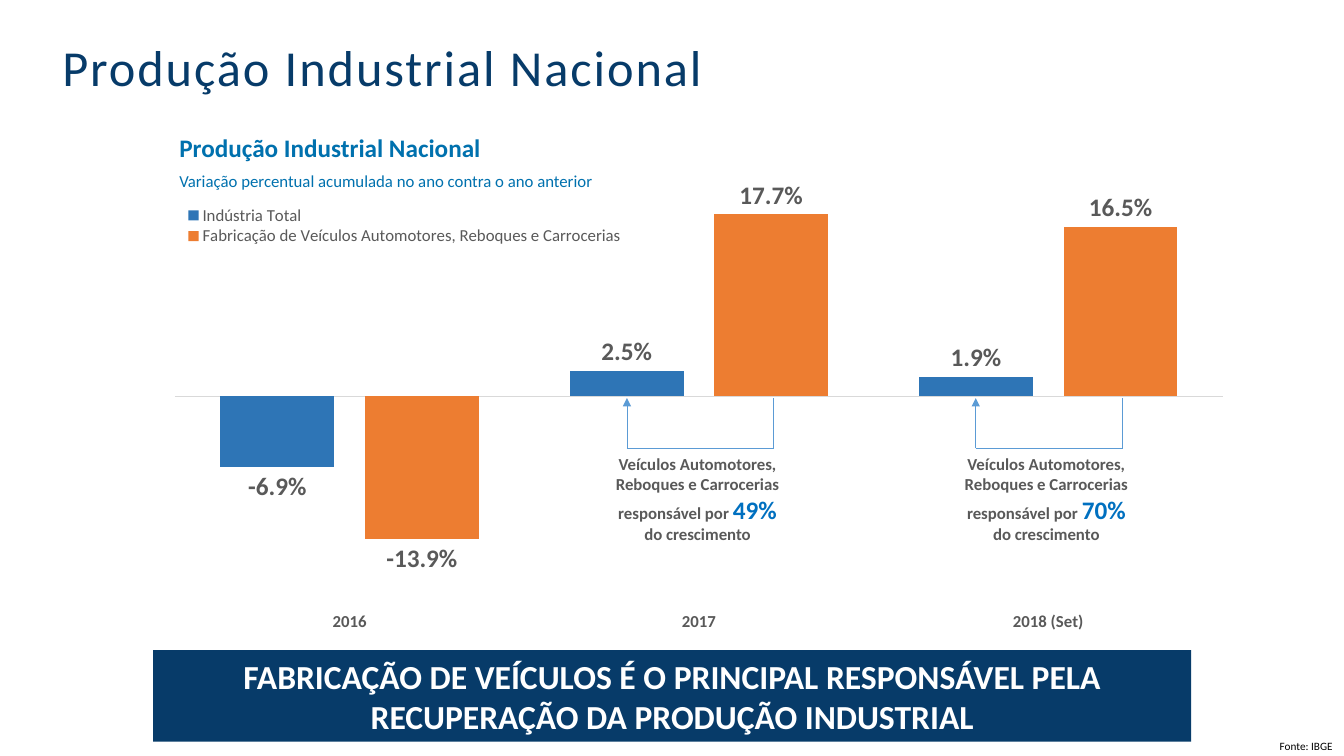
from lxml import etree
from pptx import Presentation
from pptx.chart.data import CategoryChartData
from pptx.dml.color import RGBColor
from pptx.enum.chart import (XL_CHART_TYPE, XL_LABEL_POSITION, XL_LEGEND_POSITION,
                             XL_TICK_LABEL_POSITION, XL_TICK_MARK)
from pptx.enum.shapes import MSO_CONNECTOR, MSO_SHAPE
from pptx.enum.text import MSO_ANCHOR, MSO_AUTO_SIZE, PP_ALIGN
from pptx.oxml.ns import qn
from pptx.util import Cm, Pt

COLUMN = XL_CHART_TYPE.COLUMN_CLUSTERED
OUTSIDE = XL_LABEL_POSITION.OUTSIDE_END
RIGHT = XL_LEGEND_POSITION.RIGHT
LOW = XL_TICK_LABEL_POSITION.LOW
NO_TICK = XL_TICK_MARK.NONE
STRAIGHT = MSO_CONNECTOR.STRAIGHT
RECT = MSO_SHAPE.RECTANGLE
MIDDLE = MSO_ANCHOR.MIDDLE
FIXED = MSO_AUTO_SIZE.NONE
LEFT, CENTER = PP_ALIGN.LEFT, PP_ALIGN.CENTER

FONT = "Calibri"
NAVY, BLUE, ACCENT = "073B69", "0071AE", "0070C0"
GRAY, PALE, ARROW = "595959", "D9D9D9", "5B9BD5"
WHITE, BLACK = "FFFFFF", "000000"

YEARS = ["2016", "2017", "2018 (Set)"]
SERIES = [
    ("Indústria Total", [-0.069, 0.025, 0.019], "2E75B6"),
    ("Fabricação de Veículos Automotores, Reboques e Carrocerias",
     [-0.139, 0.177, 0.165], "ED7D31"),
]
SHARES = ["49%", "70%"]


def put(obj, **vals):
    for name, val in vals.items():
        setattr(obj, name, val)


def rgb(code):
    return RGBColor.from_string(code)


def style(font, size, color, bold=False):
    put(font, name=FONT, size=Pt(size), bold=bold)
    font.color.rgb = rgb(color)


def fill(par, runs, **form):
    """Write (text, size, colour, bold) runs into a paragraph."""
    put(par, **form)
    for text, *look in runs:
        run = par.add_run()
        run.text = text
        style(run.font, *look)


def inset(frame, gap):
    for side in ("left", "top", "right", "bottom"):
        setattr(frame, f"margin_{side}", Cm(gap))


def add_text(slide, box, pars, gap=0.13, wrap=True, **form):
    frame = slide.shapes.add_textbox(*map(Cm, box)).text_frame
    frame.word_wrap = wrap
    inset(frame, gap)
    for i, runs in enumerate(pars):
        par = frame.add_paragraph() if i else frame.paragraphs[0]
        fill(par, runs, **form)


def add_line(slide, *ends, arrow=False):
    line = slide.shapes.add_connector(STRAIGHT, *map(Cm, ends))
    line.line.color.rgb = rgb(ARROW)
    line.line.width = Pt(0.5)
    if arrow:
        etree.SubElement(line.line._get_or_add_ln(), qn("a:tailEnd"), type="triangle")
    etree.SubElement(line._element.spPr, qn("a:effectLst"))


def add_title(slide):
    title = slide.shapes.title
    put(title, left=Cm(1.57), top=Cm(1.02), width=Cm(30.73), height=Cm(1.4))
    frame = title.text_frame
    put(frame, auto_size=FIXED, vertical_anchor=MIDDLE, word_wrap=True)
    inset(frame, 0)
    par = frame.paragraphs[0]
    fill(par, [("Produção Industrial Nacional", 36, NAVY)],
         alignment=LEFT, line_spacing=Pt(40))
    par.runs[0].font._element.set("spc", "140")


def lay(parent, index, inner=False, **sizes):
    """Place a chart part by fractions of the chart area."""
    for old in parent.findall(qn("c:layout")):
        parent.remove(old)
    layout = etree.Element(qn("c:layout"))
    manual = etree.SubElement(layout, qn("c:manualLayout"))
    if inner:
        etree.SubElement(manual, qn("c:layoutTarget"), val="inner")
    for name in ("xMode", "yMode"):
        etree.SubElement(manual, qn(f"c:{name}"), val="edge")
    for name, val in sizes.items():
        etree.SubElement(manual, qn(f"c:{name}"), val=str(val))
    parent.insert(index, layout)


def add_chart(slide):
    data = CategoryChartData(number_format="0.0%")
    data.categories = YEARS
    for name, vals, _ in SERIES:
        data.add_series(name, vals)
    box = map(Cm, (4.14, 4.45, 26.95, 11.79))
    chart = slide.shapes.add_chart(COLUMN, *box, data).chart
    put(chart, has_title=False, has_legend=True)
    style(chart.font, 10, BLACK)

    put(chart.legend, position=RIGHT, include_in_layout=False)
    style(chart.legend.font, 12, GRAY)
    lay(chart.legend._element, 1, x=0.01, y=0.06, w=0.43, h=0.09)
    area = chart._chartSpace.chart.plotArea
    lay(area, 0, inner=True, x=0.01, y=0.03, w=0.98, h=0.88)

    put(chart.value_axis, minimum_scale=-0.2, maximum_scale=0.2,
        has_major_gridlines=False, visible=False)
    axis = chart.category_axis
    put(axis, tick_label_position=LOW, major_tick_mark=NO_TICK,
        minor_tick_mark=NO_TICK)
    style(axis.tick_labels.font, 12, GRAY, True)
    axis.format.line.color.rgb = rgb(PALE)
    axis.format.line.width = Pt(0.75)

    plot = chart.plots[0]
    put(plot, gap_width=80, overlap=-27, vary_by_categories=False)
    for bars, (_, _, color) in zip(plot.series, SERIES):
        bars.invert_if_negative = False
        bars.format.fill.solid()
        bars.format.fill.fore_color.rgb = rgb(color)
        put(bars.data_labels, show_value=True, position=OUTSIDE,
            number_format="0.0%", number_format_is_linked=False)
        style(bars.data_labels.font, 18, GRAY, True)


def add_note(slide, left, share):
    """Bracket from the vehicle bar to the total bar, with its text."""
    right, top, low = left + 3.7, 10.03, 11.3
    add_line(slide, left, low, left, top, arrow=True)
    add_line(slide, right, top, right, low)
    add_line(slide, left, low, right, low)
    runs = [("Veículos Automotores, Reboques e Carrocerias responsável por ",
             12, GRAY, True),
            (share, 18, ACCENT, True),
            (" do crescimento", 12, GRAY, True)]
    add_text(slide, (left - 0.43, low, 4.42, 2.77), [runs],
             alignment=CENTER, space_before=Pt(6))


def add_banner(slide):
    shape = slide.shapes.add_shape(RECT, *map(Cm, (3.86, 16.38, 26.16, 2.31)))
    shape.shadow.inherit = False
    shape.fill.solid()
    shape.fill.fore_color.rgb = rgb(NAVY)
    shape.line.fill.background()
    put(shape.text_frame, word_wrap=True, vertical_anchor=MIDDLE)
    text = ("FABRICAÇÃO DE VEÍCULOS É O PRINCIPAL RESPONSÁVEL PELA "
            "RECUPERAÇÃO DA PRODUÇÃO INDUSTRIAL")
    fill(shape.text_frame.paragraphs[0], [(text, 24, WHITE, True)], alignment=CENTER)


def main():
    deck = Presentation()
    put(deck, slide_width=Cm(33.87), slide_height=Cm(19.05))
    slide = deck.slides.add_slide(deck.slide_layouts[5])
    add_title(slide)
    add_chart(slide)
    add_text(slide, (4.39, 3.2, 11.1, 1.96),
             [[("Produção Industrial Nacional", 18, BLUE, True)],
              [("Variação percentual acumulada no ano contra o ano anterior", 12, BLUE)]],
             space_before=Pt(6))
    add_text(slide, (32, 18.47, 1.85, 0.61), [[("Fonte: IBGE", 8, BLACK)]],
             gap=0.25, wrap=False)
    for i, share in enumerate(SHARES):
        add_note(slide, 15.8 + 8.79 * i, share)
    add_banner(slide)
    deck.save("out.pptx")


if __name__ == "__main__":
    main()
